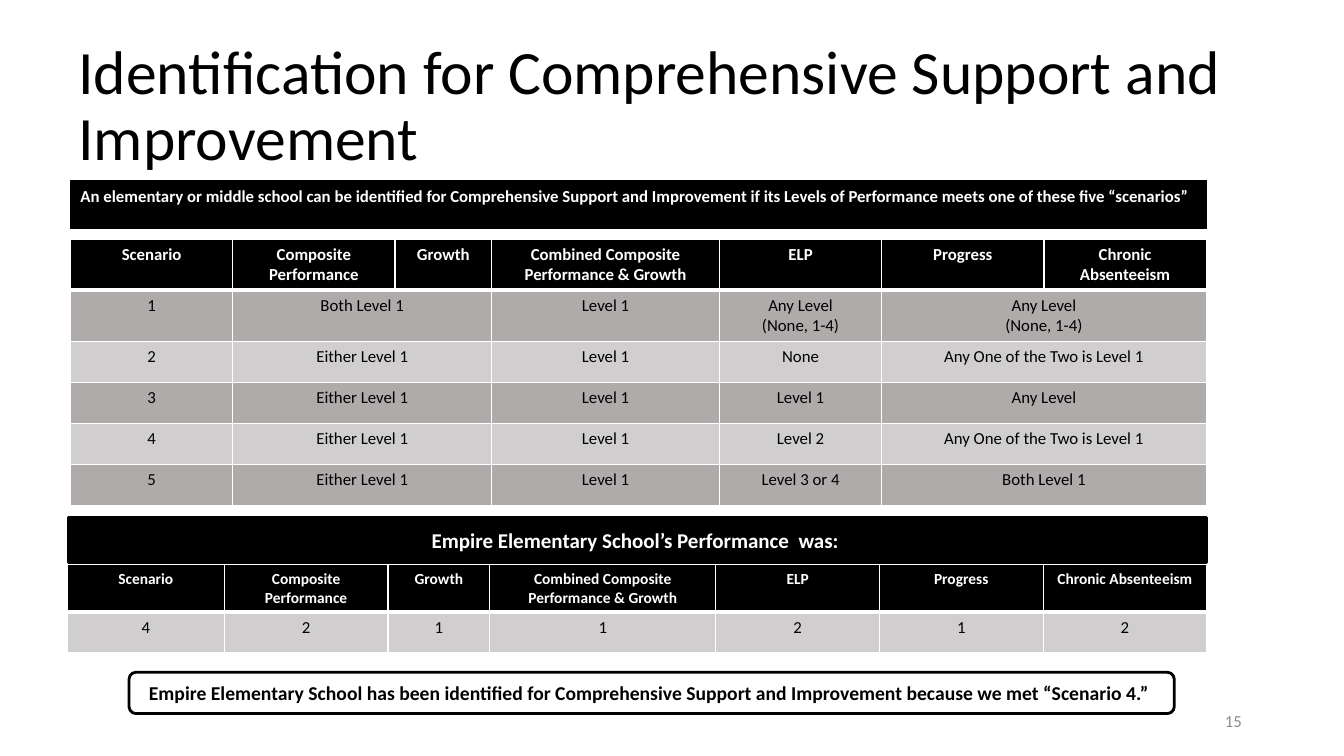
import pptx
import pptx.dml.color
import pptx.enum.shapes
import pptx.enum.text
import pptx.oxml.ns
import pptx.util
from lxml import etree

Pt = pptx.util.Pt
ALIGN = pptx.enum.text.PP_ALIGN
ANCHOR = pptx.enum.text.MSO_ANCHOR
SHAPE = pptx.enum.shapes.MSO_SHAPE

BLACK, WHITE, DARK, LIGHT, GREY = "000000", "FFFFFF", "AFABAB", "D0CECE", "8C8C8C"
HEADERS = ["Scenario", "Composite Performance", "Growth",
           "Combined Composite Performance & Growth", "ELP", "Progress",
           "Chronic Absenteeism"]
SCENARIOS = [
    ("1", "Both Level 1", "Level 1", "Any Level\n(None, 1-4)", "Any Level\n(None, 1-4)"),
    ("2", "Either Level 1", "Level 1", "None", "Any One of the Two is Level 1"),
    ("3", "Either Level 1", "Level 1", "Level 1", "Any Level"),
    ("4", "Either Level 1", "Level 1", "Level 2", "Any One of the Two is Level 1"),
    ("5", "Either Level 1", "Level 1", "Level 3 or 4", "Both Level 1"),
]
RESULTS = ["4", "2", "1", "1", "2", "1", "2"]


def rgb(color):
    """Turn a hex string into a colour."""
    return pptx.dml.color.RGBColor.from_string(color)


def write(tf, text, size=12, color=BLACK, bold=False, align=ALIGN.CENTER, spacing=None):
    """Write each line of text as one formatted paragraph."""
    tf.word_wrap = True
    for i, line in enumerate(text.split("\n")):
        p = tf.add_paragraph() if i else tf.paragraphs[0]
        p.alignment = align
        if spacing:
            p.line_spacing = spacing
        r = p.add_run()
        r.text = line
        r.font.name = "Calibri"
        r.font.size = Pt(size)
        r.font.bold = bold
        r.font.color.rgb = rgb(color)


def add_text(s, box, text, **fmt):
    """Place a vertically centred text box."""
    tf = s.shapes.add_textbox(*map(Pt, box)).text_frame
    write(tf, text, **fmt)
    tf.vertical_anchor = ANCHOR.MIDDLE


def add_banner(s, box, text, kind=SHAPE.RECTANGLE, fill=BLACK, line=2,
               anchor=ANCHOR.MIDDLE, **fmt):
    """Place a filled, black-edged shape with bold text."""
    sp = s.shapes.add_shape(kind, *map(Pt, box))
    sp.shadow.inherit = False
    sp.fill.solid()
    sp.fill.fore_color.rgb = rgb(fill)
    sp.line.color.rgb = rgb(BLACK)
    sp.line.width = Pt(line)
    write(sp.text_frame, text, bold=True, **fmt)
    sp.text_frame.vertical_anchor = anchor


def set_borders(cell, **widths):
    """Draw white cell borders of the given widths in points."""
    tcPr = cell._tc.get_or_add_tcPr()
    for side in "LRTB":
        ln = etree.SubElement(tcPr, pptx.oxml.ns.qn("a:ln" + side),
                              w=str(Pt(widths.get(side, 1))))
        fill = etree.SubElement(ln, pptx.oxml.ns.qn("a:solidFill"))
        etree.SubElement(fill, pptx.oxml.ns.qn("a:srgbClr"), val=WHITE)


def add_table(s, left, top, widths, heights, fills, header_size):
    """Place a table with a header row and coloured body rows."""
    table = s.shapes.add_table(len(heights), len(widths), Pt(left), Pt(top),
                               Pt(sum(widths)), Pt(sum(heights))).table
    for col, width in zip(table.columns, widths):
        col.width = Pt(width)
    for i, height in enumerate(heights):
        table.rows[i].height = Pt(height)
        for j, header in enumerate(HEADERS):
            cell = table.cell(i, j)
            set_borders(cell, T=3 if i == 1 else 1, B=1 if i else 3)
            cell.fill.solid()
            cell.fill.fore_color.rgb = rgb(fills[i - 1] if i else BLACK)
            if i == 0:
                write(cell.text_frame, header, size=header_size, color=WHITE, bold=True)
    return table


def add_scenarios(s, left, top):
    """Place the table of the five scenarios."""
    widths = [115.9, 115.9, 69.1, 162.7, 115.9, 115.9, 115.9]
    heights = [36.5, 36.5] + [29.3] * 4
    fills = [DARK, LIGHT, DARK, LIGHT, DARK]
    table = add_table(s, left, top, widths, heights, fills, 12)
    for i, row in enumerate(SCENARIOS, 1):
        for first, last in ((1, 2), (5, 6)):
            table.cell(i, first).merge(table.cell(i, last))
        for j, text in zip((0, 1, 3, 4, 5), row):
            write(table.cell(i, j).text_frame, text)


def add_results(s, left, top):
    """Place the table of the school's own levels."""
    widths = [112, 117, 72.7, 161.5, 116.9, 116.9, 116.9]
    table = add_table(s, left, top, widths, [34, 29.3], [LIGHT], 11)
    for j, text in enumerate(RESULTS):
        write(table.cell(1, j).text_frame, text)


def build_slide(prs):
    """Build the identification slide."""
    s = prs.slides.add_slide(prs.slide_layouts[6])
    add_text(s, (49, 17.3, 897, 118.8),
             "Identification for Comprehensive Support and Improvement",
             size=44, align=ALIGN.LEFT, spacing=0.9)
    add_scenarios(s, 50.4, 170.9)
    add_text(s, (678.2, 500.4, 216, 28.8), "15", color=GREY, align=ALIGN.RIGHT)
    add_banner(s, (50.4, 128.9, 811.4, 34.6),
               "An elementary or middle school can be identified for Comprehensive Support "
               "and Improvement if its Levels of Performance meets one of these five “scenarios”",
               line=0.75, anchor=ANCHOR.TOP, color=WHITE, align=ALIGN.LEFT)
    add_banner(s, (49, 369.4, 812.9, 32.4),
               "Empire Elementary School’s Performance  was: ", size=15, color=WHITE)
    add_results(s, 48.2, 403.2)
    add_banner(s, (92.2, 480.2, 746.6, 29.5),
               "Empire Elementary School has been identified for Comprehensive Support "
               "and Improvement because we met “Scenario 4.” ",
               kind=SHAPE.ROUNDED_RECTANGLE, fill=WHITE, size=14)


def main():
    """Create and save the presentation."""
    prs = pptx.Presentation()
    prs.slide_width, prs.slide_height = Pt(960), Pt(540)
    build_slide(prs)
    prs.save("out.pptx")


if __name__ == "__main__":
    main()
